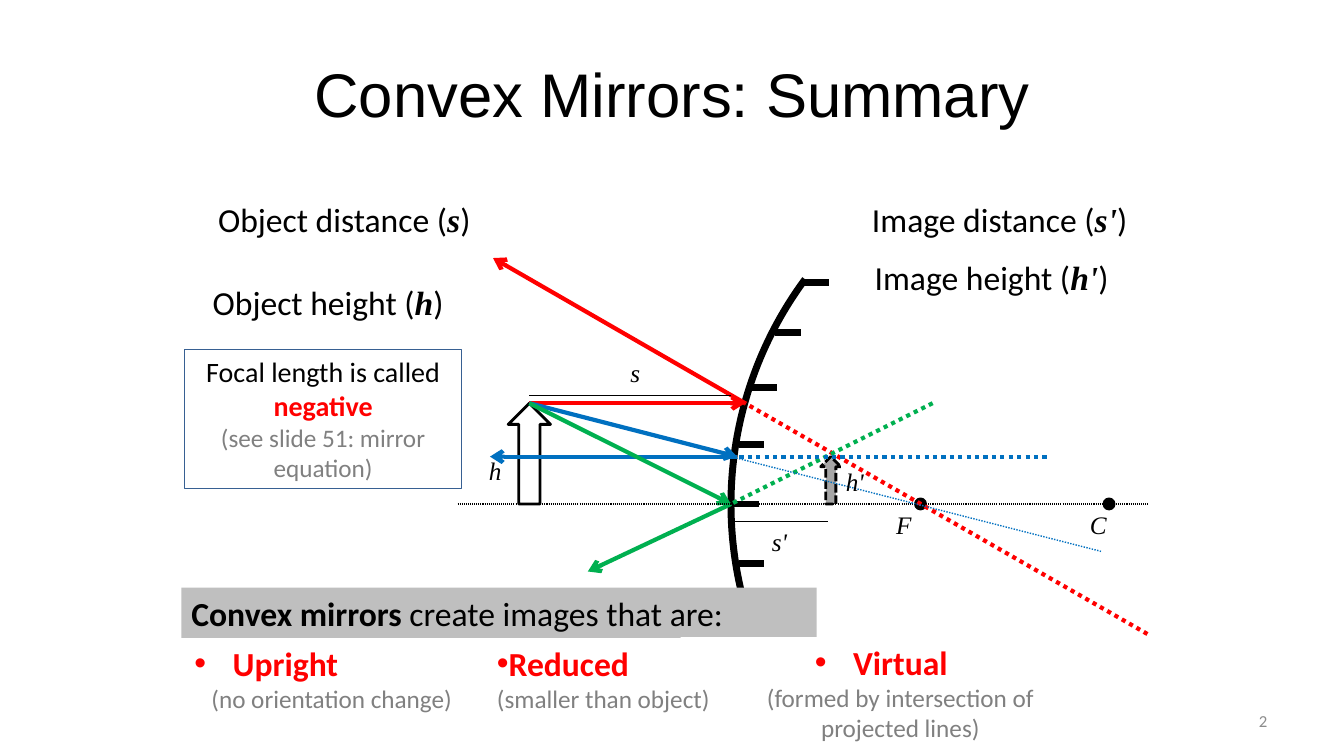
from lxml import etree
from pptx import Presentation
from pptx.dml.color import RGBColor
from pptx.enum.dml import MSO_LINE
from pptx.enum.shapes import MSO_CONNECTOR, MSO_SHAPE
from pptx.enum.text import MSO_ANCHOR, MSO_AUTO_SIZE, PP_ALIGN
from pptx.oxml.ns import qn
from pptx.util import Inches, Pt

LEFT, CENTER, RIGHT = PP_ALIGN.LEFT, PP_ALIGN.CENTER, PP_ALIGN.RIGHT
TOP, MIDDLE = MSO_ANCHOR.TOP, MSO_ANCHOR.MIDDLE
DOTS, DASHES = MSO_LINE.ROUND_DOT, MSO_LINE.SQUARE_DOT
STRAIGHT = MSO_CONNECTOR.STRAIGHT
RECT, OVAL = MSO_SHAPE.RECTANGLE, MSO_SHAPE.OVAL
ARC, DOWN_ARROW = MSO_SHAPE.ARC, MSO_SHAPE.DOWN_ARROW

BLACK, WHITE, GREY = "000000", "FFFFFF", "808080"
RED, BLUE, GREEN = "FF0000", "0070C0", "00B050"
SERIF = "Times New Roman"


def color(code):
    return RGBColor.from_string(code)


def span(text, size=24, ink=BLACK, font="Calibri", bold=False, italic=False):
    return text, size, ink, font, bold, italic


class Slide:
    """Holds the current page and draws the elements on it."""

    def __init__(self, deck):
        self.page = deck.slides.add_slide(deck.slide_layouts[5])

    def fill_text(self, box, paragraphs, align=LEFT, anchor=TOP, grow=True):
        frame = box.text_frame
        frame.word_wrap = True
        frame.vertical_anchor = anchor
        frame.auto_size = MSO_AUTO_SIZE.SHAPE_TO_FIT_TEXT if grow else MSO_AUTO_SIZE.NONE
        for index, spans in enumerate(paragraphs):
            para = frame.add_paragraph() if index else frame.paragraphs[0]
            para.alignment = align
            for text, size, ink, font, bold, italic in spans:
                if text == "\n":
                    para.add_line_break()
                    continue
                run = para.add_run()
                run.text = text
                run.font.size, run.font.name = Pt(size), font
                run.font.bold, run.font.italic = bold, italic
                run.font.color.rgb = color(ink)
        return box

    def title(self, text, *at):
        box = self.page.shapes.title
        box.left, box.top, box.width, box.height = map(Inches, at)
        self.fill_text(box, [[span(text, 44, font="Arial")]], CENTER, MIDDLE, False)

    def text(self, at, paragraphs, align=LEFT, anchor=TOP, grow=True):
        box = self.page.shapes.add_textbox(*map(Inches, at))
        return self.fill_text(box, paragraphs, align, anchor, grow)

    def shape(self, kind, at, fill=None, line=None, width=2, turn=0, dash=None):
        shape = self.page.shapes.add_shape(kind, *map(Inches, at))
        shape.shadow.inherit = False
        shape.rotation = turn
        if fill:
            shape.fill.solid()
            shape.fill.fore_color.rgb = color(fill)
        else:
            shape.fill.background()
        if line:
            shape.line.color.rgb = color(line)
            shape.line.width = Pt(width)
            if dash:
                shape.line.dash_style = dash
        else:
            shape.line.fill.background()
        return shape

    def line(self, start, end, ink=BLACK, width=0.75, dash=None, arrow=False):
        line = self.page.shapes.add_connector(STRAIGHT, *map(Inches, start + end))
        line.line.color.rgb = color(ink)
        line.line.width = Pt(width)
        if dash:
            line.line.dash_style = dash
        if arrow:
            etree.SubElement(line.get_or_add_ln(), qn("a:tailEnd"), type="arrow")
        etree.SubElement(line._element.spPr, qn("a:effectLst"))

    def symbol(self, text, left, top, width=0.25, align=LEFT):
        self.text((left, top, width, 0.4), [[span(text, 18, font=SERIF, italic=True)]], align)

    def quantity(self, name, letter, left, top):
        spans = [span(name + " ("), span(letter, font=SERIF, bold=True, italic=True), span(")")]
        self.text((left, top, 3.17, 0.51), [spans], CENTER)

    def bullet(self, box, margin):
        properties = box.text_frame.paragraphs[0]._p.get_or_add_pPr()
        properties.set("marL", str(Inches(margin)))
        properties.set("indent", str(Inches(-0.38)))
        etree.SubElement(properties, qn("a:buFont"), typeface="Arial")
        etree.SubElement(properties, qn("a:buChar"), char="•")


def main():
    deck = Presentation()
    deck.slide_width, deck.slide_height = Inches(13.33), Inches(7.5)
    slide = Slide(deck)
    slide.title("Convex Mirrors: Summary", 0.67, 0.3, 12, 1.25)

    # Mirror with hatching on its back
    for x, y in [(7.97, 2.8), (7.69, 3.3), (7.46, 3.84), (7.33, 4.41), (7.28, 5), (7.33, 5.59)]:
        slide.line((x, y), (x + 0.25, y), width=5)
    mirror = slide.shape(ARC, (7.25, 1.25, 7.5, 7.5), line=BLACK, width=5, turn=180)
    mirror.adjustments[0], mirror.adjustments[1] = 194.11, 21.89

    # Centre, focus and object
    for letter, x, label_x in [("C", 11, 10.71), ("F", 9.13, 8.79)]:
        slide.shape(OVAL, (x - 0.05, 4.95, 0.1, 0.1), BLACK, BLACK)
        slide.symbol(letter, label_x, 5)
    slide.shape(DOWN_ARROW, (5.04, 4, 0.42, 1), line=BLACK, turn=180)

    # Rays: from the object tip to the mirror, then reflected
    tip, vertex = (5.25, 4), (7.25, 5)
    for ink, hit, end in [
        (RED, (7.39, 4), (4.89, 2.56)),
        (BLUE, (7.31, 4.53), (4.86, 4.53)),
        (GREEN, vertex, (5.83, 5.67)),
    ]:
        slide.line(tip, hit, ink, 3, arrow=True)
        slide.line(hit, end, ink, 3, arrow=True)

    # Virtual image, axis and projected rays
    slide.shape(DOWN_ARROW, (8.14, 4.53, 0.2, 0.47), "A6A6A6", BLACK, turn=180, dash=DASHES)
    for start, end, ink, width in [
        ((4.54, 5), (11.38, 5), BLACK, 0.75),
        ((11.38, 6.29), (7.39, 4), RED, 3),
        ((9.25, 4), vertex, GREEN, 3),
        ((7.25, 4.53), (10.38, 4.53), BLUE, 3),
        ((7.25, 4.53), (10.92, 5.47), BLUE, 1),
    ]:
        slide.line(start, end, ink, width, DOTS)

    # Heights and distances
    slide.quantity("Object height", "h", 1.67, 2.75)
    slide.symbol("h", 4.75, 4.47)
    slide.quantity("Image height", "h'", 8.25, 2.5)
    slide.symbol("h'", 8.29, 4.58, 0.42)
    slide.quantity("Image distance", "s'", 8.33, 1.92)
    slide.line((7.25, 5.17), (8.21, 5.17))
    slide.symbol("s'", 7.52, 5.17, 0.42, CENTER)
    slide.quantity("Object distance", "s", 1.83, 1.92)
    slide.line((5.25, 3.92), (7.25, 3.92))
    slide.symbol("s", 6.09, 3.5, 0.42, CENTER)

    # Summary heading and the three properties
    heading = slide.shape(RECT, (1.8, 5.83, 6.3, 0.5), "BFBFBF")
    slide.fill_text(heading, [[span("Convex mirrors ", bold=True), span("create images that are:")]])

    upright = slide.text((1.83, 6.33, 2.92, 0.81), [
        [span("Upright", ink=RED, bold=True)],
        [span("(no orientation change)", 18, GREY)],
    ])
    upright.text_frame.paragraphs[1].alignment = CENTER
    slide.bullet(upright, 0.38)

    virtual = slide.shape(RECT, (6.75, 6.32, 3.98, 1.11), WHITE)
    slide.fill_text(virtual, [[
        span("Virtual", ink=RED, bold=True),
        span("\n"),
        span("(formed by intersection of projected lines)", 18, GREY),
    ]], CENTER)
    slide.bullet(virtual, 0.38)

    reduced = slide.text((4.83, 6.33, 2.61, 0.81), [
        [span("Reduced", ink=RED, bold=True)],
        [span("(smaller than object)", 18, GREY)],
    ])
    slide.bullet(reduced, 0)

    # Focal length note and page number
    note = slide.shape(RECT, (1.83, 3.47, 2.75, 1.38), line="376092", width=0.75)
    slide.fill_text(note, [
        [span("Focal length is called ", 20), span("negative", 20, RED, bold=True)],
        [span("(see slide 51: mirror equation)", 18, GREY)],
    ], CENTER)
    slide.text((9.56, 6.95, 3.11, 0.4), [[span("2", 12, "8C8C8C")]], RIGHT, MIDDLE, False)

    deck.save("out.pptx")


if __name__ == "__main__":
    main()
